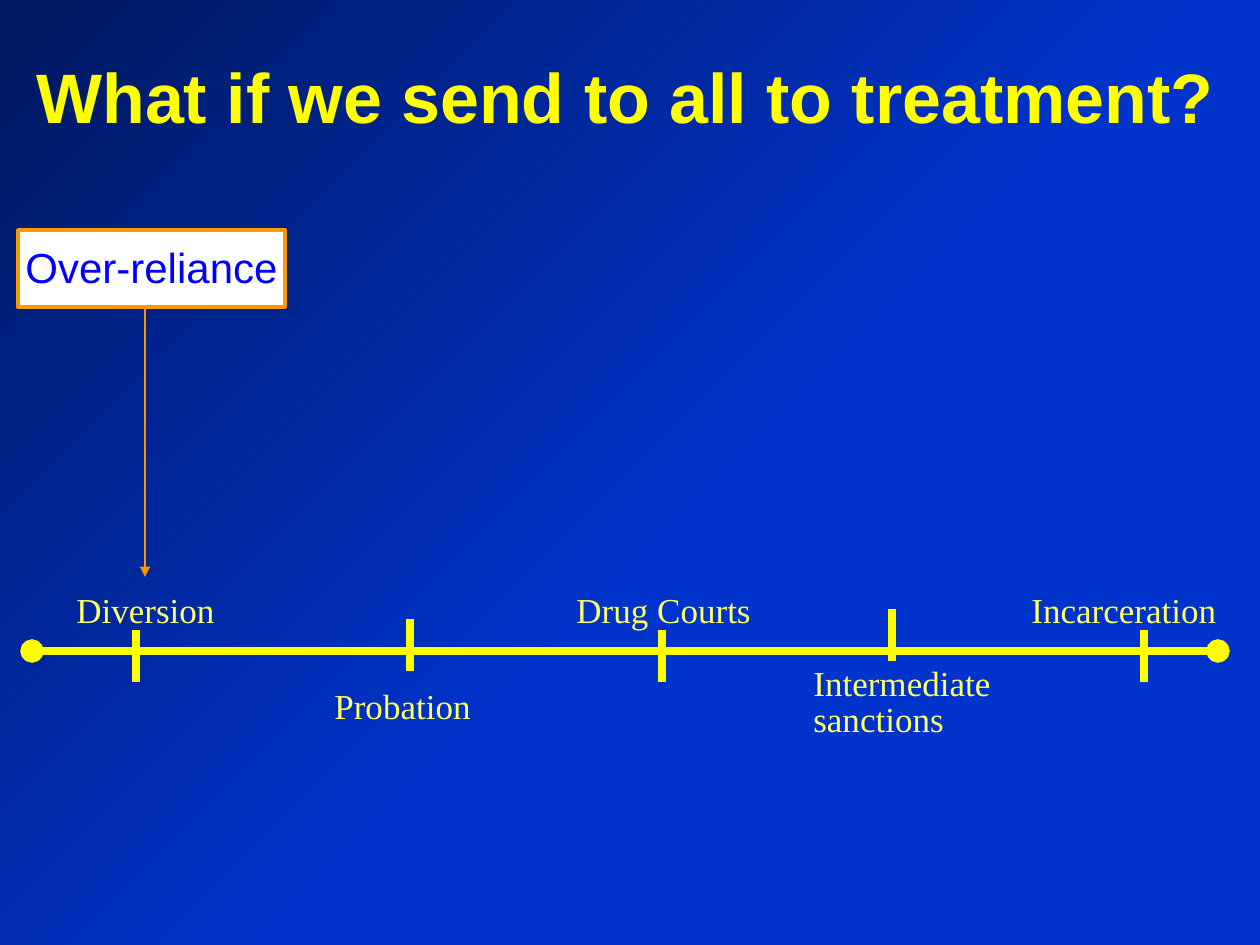
from pptx import Presentation
from pptx.dml.color import RGBColor as Rgb
from pptx.enum.shapes import MSO_CONNECTOR as Conn, MSO_SHAPE as Shape
from pptx.enum.text import MSO_ANCHOR as Anchor, MSO_AUTO_SIZE as Fit, PP_ALIGN as Align
from pptx.oxml import parse_xml
from pptx.oxml.ns import nsdecls, qn
from pptx.util import Emu, Pt
from lxml.etree import SubElement

HUE = {
    "blue": "0033CC", "navy": "00185E", "yellow": "FFFF00", "pale": "FFFF66",
    "arrow": "F99600", "edge": "FF9900", "white": "FFFFFF", "ink": "0000FF",
}
TITLE = "What if we send to all to treatment?"
CAUSE = "Over-reliance"
STAGES = [
    (["Diversion"], 64, 582, 165, 136, 630),
    (["Probation"], 322, 678, 163, 410, 619),
    (["Drug Courts"], 564, 582, 202, 662, 630),
    (["Intermediate", "sanctions"], 801, 655, 203, 892, 609),
    (["Incarceration"], 1019, 582, 212, 1144, 630),
]
AXIS = (32, 651, 1218, 651)
ARROW = (145, 307, 145, 577)
TICK = 52


def px(n):
    return Emu(round(n * 914400 / 126))


def rgb(name):
    return Rgb.from_string(HUE[name])


def style(par, face, size, color, bold=False):
    font = par.font
    font.name, font.size, font.bold = face, Pt(size), bold
    font.color.rgb = rgb(color)


def line(slide, ends, color, width, head=None, tail=None):
    rule = slide.shapes.add_connector(Conn.STRAIGHT, *map(px, ends))
    rule.line.color.rgb = rgb(color)
    rule.line.width = Pt(width)
    ln = rule.line._get_or_add_ln()
    for tag, kind in (("a:headEnd", head), ("a:tailEnd", tail)):
        if kind:
            SubElement(ln, qn(tag), type=kind)
    SubElement(rule._element.spPr, qn("a:effectLst"))


def paint(slide):
    fill = slide.background.fill
    fill.gradient()
    grad = slide._element.find(".//" + qn("a:gradFill"))
    stops = [(0, "blue"), (44, "blue"), (100, "navy")]
    marks = "".join(
        f'<a:gs pos="{pos * 1000}"><a:srgbClr val="{HUE[name]}"/></a:gs>'
        for pos, name in stops)
    new = parse_xml(
        f'<a:gradFill {nsdecls("a")} rotWithShape="0"><a:gsLst>{marks}</a:gsLst>'
        '<a:path path="circle"><a:fillToRect l="100000" t="100000"/></a:path>'
        '</a:gradFill>')
    grad.getparent().replace(grad, new)


def head(slide):
    title = slide.shapes.title
    title.left, title.top, title.width, title.height = map(px, (-10, 47, 1270, 97))
    frame = title.text_frame
    frame.text = TITLE
    frame.auto_size = Fit.NONE
    frame.vertical_anchor = Anchor.TOP
    par = frame.paragraphs[0]
    par.alignment = Align.CENTER
    style(par, "Arial", 40, "yellow", True)


def label(slide, words, left, top, width):
    box = slide.shapes.add_textbox(*map(px, (left, top, width, 17 + 35 * len(words))))
    frame = box.text_frame
    frame.word_wrap = False
    frame.text = "\n".join(words)
    for i, par in enumerate(frame.paragraphs):
        style(par, "Times New Roman", 20, "pale")
        if i:
            par.line_spacing = 0.87


def cause(slide):
    box = slide.shapes.add_shape(Shape.RECTANGLE, *map(px, (18, 230, 267, 77)))
    box.shadow.inherit = False
    box.fill.solid()
    box.fill.fore_color.rgb = rgb("white")
    box.line.color.rgb = rgb("edge")
    box.line.width = Pt(2)
    frame = box.text_frame
    frame.text = CAUSE
    frame.word_wrap = False
    frame.vertical_anchor = Anchor.TOP
    frame.margin_top = px(11)
    frame.margin_left = frame.margin_right = px(6)
    par = frame.paragraphs[0]
    par.alignment = Align.CENTER
    style(par, "Arial", 24, "ink")


def main():
    deck = Presentation()
    deck.slide_width, deck.slide_height = px(1260), px(945)
    slide = deck.slides.add_slide(deck.slide_layouts[5])
    paint(slide)
    head(slide)
    line(slide, AXIS, "yellow", 4.5, "oval", "oval")
    for words, left, top, width, x, y in STAGES:
        label(slide, words, left, top, width)
        line(slide, (x, y, x, y + TICK), "yellow", 5)
    line(slide, ARROW, "arrow", 0.75, tail="triangle")
    cause(slide)
    deck.save("out.pptx")


if __name__ == "__main__":
    main()
